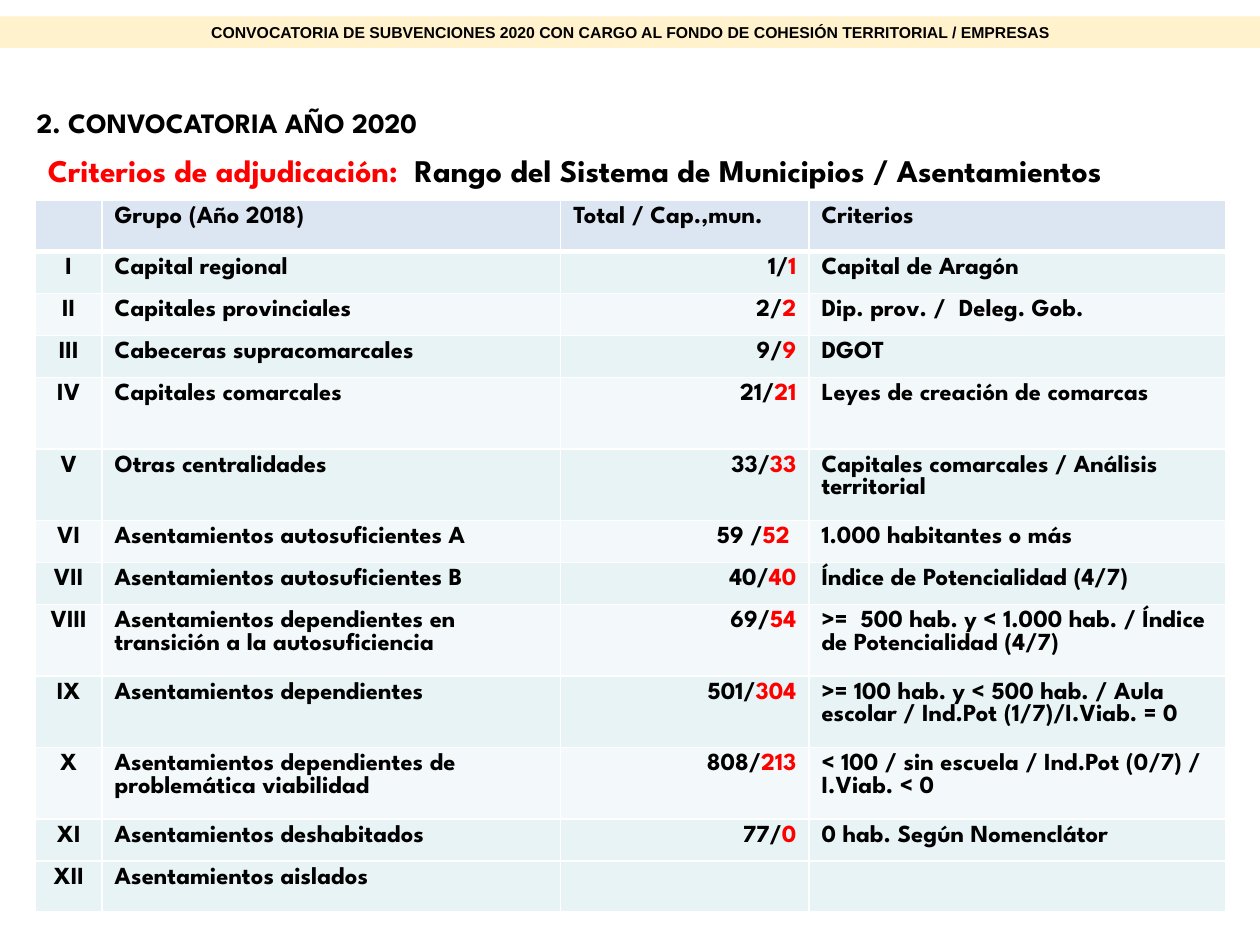
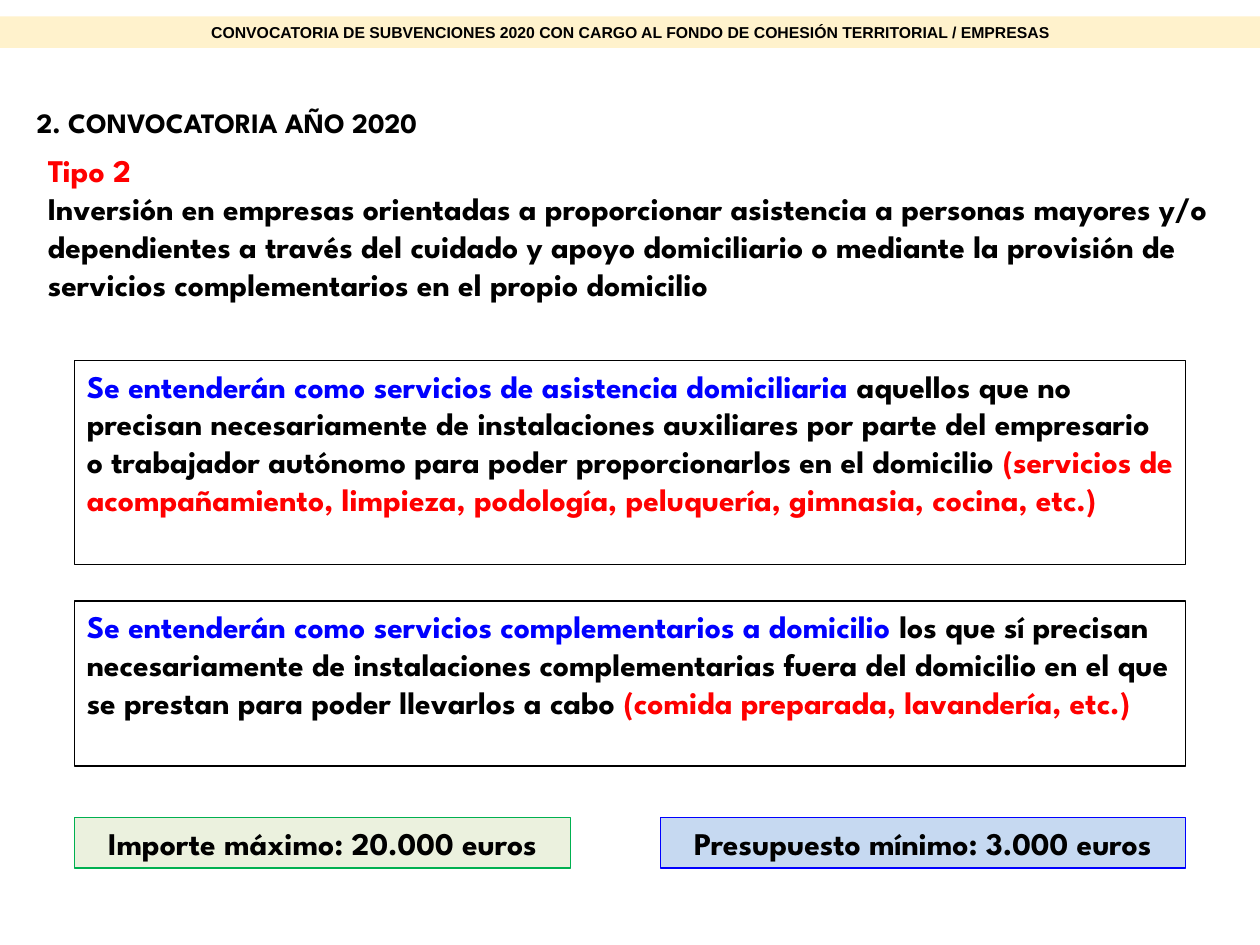
"""Builds two slides on the 2020 grant call: award criteria and type 2 aid."""
from lxml import etree
from pptx import Presentation
from pptx.dml.color import RGBColor
from pptx.enum.shapes import MSO_SHAPE
from pptx.enum.text import MSO_ANCHOR, MSO_AUTO_SIZE, PP_ALIGN
from pptx.oxml.ns import qn
from pptx.util import Pt

BLACK, RED, BLUE, WHITE = "000000", "FF0000", "0000FF", "FFFFFF"
HEADER_FILL, ODD_FILL, EVEN_FILL = "DCE6F2", "E7F3F4", "F3F9FA"
LEFT, CENTER, RIGHT = PP_ALIGN.LEFT, PP_ALIGN.CENTER, PP_ALIGN.RIGHT

CALL = ("CONVOCATORIA DE SUBVENCIONES 2020 CON CARGO AL FONDO DE "
        "COHESIÓN TERRITORIAL / EMPRESAS")
SECTION = "2. CONVOCATORIA AÑO 2020"

HEADINGS = ["", "Grupo (Año 2018)", "Total / Cap.,mun.", "Criterios"]
GROUPS = [
    ("I", "Capital regional", "1/", "1", "Capital de Aragón"),
    ("II", "Capitales provinciales", "2/", "2", "Dip. prov. /  Deleg. Gob."),
    ("III", "Cabeceras supracomarcales", "9/", "9", "DGOT"),
    ("IV", "Capitales comarcales", "21/", "21", "Leyes de creación de comarcas"),
    ("V", "Otras centralidades", "33/", "33",
     "Capitales comarcales / Análisis territorial"),
    ("VI", "Asentamientos autosuficientes A", "59 /", "52 ",
     "1.000 habitantes o más"),
    ("VII", "Asentamientos autosuficientes B", "40/", "40",
     "Índice de Potencialidad (4/7)"),
    ("VIII", "Asentamientos dependientes en transición a la autosuficiencia",
     "69/", "54", ">=  500 hab. y < 1.000 hab. / Índice de Potencialidad (4/7)"),
    ("IX", "Asentamientos dependientes", "501/", "304",
     ">= 100 hab. y < 500 hab. / Aula escolar / Ind.Pot (1/7)/I.Viab. = 0"),
    ("X", "Asentamientos dependientes de problemática viabilidad", "808/", "213",
     "< 100 / sin escuela / Ind.Pot (0/7) / I.Viab. < 0"),
    ("XI", "Asentamientos deshabitados", "77/", "0", "0 hab. Según Nomenclátor"),
    ("XII", "Asentamientos aislados", "", "", ""),
]
TALL_GROUPS = {"IV", "V", "VIII", "IX", "X"}
COLUMN_WIDTHS = [38.16, 262.08, 141.84, 238.32]
HEADER_HEIGHT, ROW_HEIGHT, TALL_HEIGHT = 25.8, 24, 40.9


def rgb(value):
    return RGBColor.from_string(value)


class Deck:
    def __init__(self):
        self.presentation = Presentation()
        self.presentation.slide_width = Pt(720)
        self.presentation.slide_height = Pt(540)
        self.font = "League Spartan"
        self.slide = None

    def start_slide(self):
        layout = self.presentation.slide_layouts[5]
        self.slide = self.presentation.slides.add_slide(layout)
        heading = self.slide.shapes.title
        place = {"left": 13.7, "top": 56.9, "width": 675.4, "height": 26.6}
        for name, value in place.items():
            setattr(heading, name, Pt(value))
        self.set_text(heading.text_frame, [[(SECTION, BLACK)]], 16, PP_ALIGN.JUSTIFY)
        self.box((0, 9.4, 720, 18), [[(CALL, BLACK)]], 9, CENTER,
                 fill="FFC000", opacity=20, font="Arial")

    def set_text(self, frame, paragraphs, size=18, align=LEFT, font=None):
        layout = {"word_wrap": True, "auto_size": MSO_AUTO_SIZE.NONE,
                  "vertical_anchor": MSO_ANCHOR.TOP}
        for name, value in layout.items():
            setattr(frame, name, value)
        self.fill_paragraphs(frame, paragraphs, size, align, 1.2, font)

    def fill_paragraphs(self, frame, paragraphs, size, align, leading, font=None):
        for number, pieces in enumerate(paragraphs):
            paragraph = frame.add_paragraph() if number else frame.paragraphs[0]
            spacing = {"alignment": align, "line_spacing": Pt(size * leading),
                       "space_before": Pt(0), "space_after": Pt(0)}
            for name, value in spacing.items():
                setattr(paragraph, name, value)
            for words, color in pieces:
                if not words:
                    continue
                run = paragraph.add_run()
                run.text = words
                style = {"name": font or self.font, "size": Pt(size), "bold": True}
                for name, value in style.items():
                    setattr(run.font, name, value)
                run.font.color.rgb = rgb(color)

    def text(self, place, paragraphs):
        area = self.slide.shapes.add_textbox(*map(Pt, place))
        self.set_text(area.text_frame, paragraphs)

    def box(self, place, paragraphs, size=18, align=LEFT, fill=None, line=None,
            opacity=None, font=None):
        area = self.slide.shapes.add_shape(MSO_SHAPE.RECTANGLE, *map(Pt, place))
        area.shadow.inherit = False
        if fill:
            area.fill.solid()
            area.fill.fore_color.rgb = rgb(fill)
        else:
            area.fill.background()
        if opacity:
            tint = area.element.spPr.find(qn("a:solidFill"))[0]
            etree.SubElement(tint, qn("a:alpha"), val=str(opacity * 1000))
        if line:
            area.line.color.rgb = rgb(line)
            area.line.width = Pt(0.75)
        else:
            area.line.fill.background()
        self.set_text(area.text_frame, paragraphs, size, align, font)

    def cell(self, cell, pieces, align, fill, top, bottom):
        properties = cell._tc.get_or_add_tcPr()
        for side, width in {"L": 1, "R": 1, "T": top, "B": bottom}.items():
            edge = etree.SubElement(properties, qn(f"a:ln{side}"), w=str(Pt(width)))
            paint = etree.SubElement(edge, qn("a:solidFill"))
            etree.SubElement(paint, qn("a:srgbClr"), val=WHITE)
        cell.fill.solid()
        cell.fill.fore_color.rgb = rgb(fill)
        self.fill_paragraphs(cell.text_frame, [pieces], 14, align, 0.92)

    def table(self, left, top, widths, heights, rows):
        place = map(Pt, (left, top, sum(widths), sum(heights)))
        grid = self.slide.shapes.add_table(len(rows), len(widths), *place).table
        for column, width in zip(grid.columns, widths):
            column.width = Pt(width)
        for row, height in zip(grid.rows, heights):
            row.height = Pt(height)
        for y, (fill, aligns, cells) in enumerate(rows):
            for x, (align, pieces) in enumerate(zip(aligns, cells)):
                self.cell(grid.cell(y, x), pieces, align, fill,
                          3 if y == 1 else 1, 3 if y == 0 else 1)


def criteria_slide(deck):
    deck.start_slide()
    deck.text((20.2, 82.8, 692.6, 28.8),
              [[("Criterios de adjudicación:  ", RED),
                ("Rango del Sistema de Municipios / Asentamientos", BLACK)]])
    rows = [(HEADER_FILL, [LEFT] * 4, [[(words, BLACK)] for words in HEADINGS])]
    heights = [HEADER_HEIGHT]
    for number, (rank, group, total, capitals, criterion) in enumerate(GROUPS):
        fill = EVEN_FILL if number % 2 and rank != "XII" else ODD_FILL
        cells = [[(rank, BLACK)], [(group, BLACK)],
                 [(total, BLACK), (capitals, RED)], [(criterion, BLACK)]]
        rows.append((fill, [CENTER, LEFT, RIGHT, LEFT], cells))
        heights.append(TALL_HEIGHT if rank in TALL_GROUPS else ROW_HEIGHT)
    deck.table(20.2, 114.5, COLUMN_WIDTHS, heights, rows)


def type_two_slide(deck):
    deck.start_slide()
    deck.text((20.2, 82.8, 692.6, 94.3), [
        [("Tipo 2", RED)],
        [("Inversión en empresas orientadas a proporcionar asistencia a personas "
          "mayores y/o dependientes a través del cuidado y apoyo domiciliario o "
          "mediante la provisión de servicios complementarios en el propio "
          "domicilio", BLACK)]])
    definitions = [
        (205.9, 116.6, "Se entenderán como servicios de asistencia domiciliaria ",
         "aquellos que no precisan necesariamente de instalaciones auxiliares por "
         "parte del empresario o trabajador autónomo para poder proporcionarlos "
         "en el domicilio ",
         "(servicios de acompañamiento, limpieza, podología, peluquería, "
         "gimnasia, cocina, etc.)"),
        (343.4, 94.3, "Se entenderán como servicios complementarios a domicilio ",
         "los que sí precisan necesariamente de instalaciones complementarias "
         "fuera del domicilio en el que se prestan para poder llevarlos a cabo ",
         "(comida preparada, lavandería, etc.)"),
    ]
    for top, height, term, meaning, examples in definitions:
        deck.box((42.5, top, 635, height),
                 [[(term, BLUE), (meaning, BLACK), (examples, RED)]], line=BLACK)
    amounts = [
        (42.5, 283.7, "Importe máximo: 20.000 euros", "EBF1DE", "00B050"),
        (377.3, 300.2, "Presupuesto mínimo: 3.000 euros", "C6D9F1", BLUE),
    ]
    for left, width, amount, fill, line in amounts:
        deck.box((left, 467.3, width, 28.8), [[(amount, BLACK)]], align=CENTER,
                 fill=fill, line=line)


def main():
    deck = Deck()
    criteria_slide(deck)
    type_two_slide(deck)
    deck.presentation.save("out.pptx")


if __name__ == "__main__":
    main()
